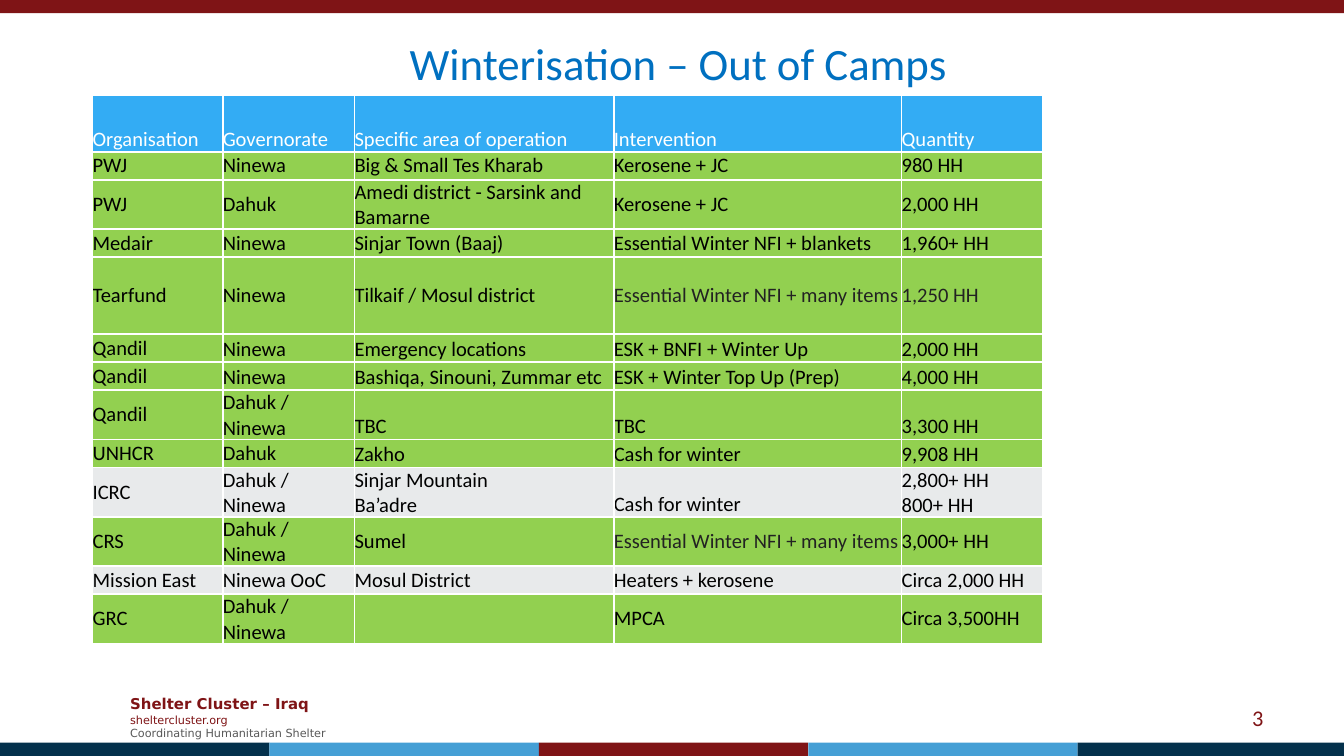
import lxml.etree
import pptx
import pptx.dml.color
import pptx.enum.shapes
import pptx.enum.text
import pptx.oxml.ns
import pptx.util

Cm = pptx.util.Cm
Pt = pptx.util.Pt
RGBColor = pptx.dml.color.RGBColor
Align = pptx.enum.text.PP_ALIGN
Anchor = pptx.enum.text.MSO_ANCHOR
qn = pptx.oxml.ns.qn

MAROON = RGBColor(0x7F, 0x14, 0x16)
NAVY = RGBColor(0x04, 0x31, 0x4C)
SKY = RGBColor(0x45, 0x9F, 0xD5)
TITLE_BLUE = RGBColor(0x00, 0x70, 0xC0)
HEADER_BLUE = RGBColor(0x33, 0xAC, 0xF4)
GREEN = RGBColor(0x92, 0xD0, 0x50)
PALE = RGBColor(0xE8, 0xEA, 0xEB)
WHITE = RGBColor(0xFF, 0xFF, 0xFF)
BLACK = RGBColor(0, 0, 0)
CHARCOAL = RGBColor(0x22, 0x22, 0x22)
GREY = RGBColor(0x59, 0x59, 0x59)

COLUMN_WIDTHS = (2.46, 2.49, 4.9, 5.44, 2.67)
HEADER_HEIGHT, ROW_HEIGHT, TALL_HEIGHT = 1.07, 0.53, 1.45

# Row fill, anchor of each cell (m = middle, b = bottom), cell texts
ROWS = (
    (HEADER_BLUE, "bbbbb", ("Organisation", "Governorate", "Specific area of operation",
                            "Intervention", "Quantity")),
    (GREEN, "mmmmm", ("PWJ", "Ninewa", "Big & Small Tes Kharab", "Kerosene + JC", "980 HH")),
    (GREEN, "mmmmm", ("PWJ", "Dahuk", "Amedi district - Sarsink and Bamarne",
                      "Kerosene + JC", "2,000 HH")),
    (GREEN, "mmmmm", ("Medair", "Ninewa", "Sinjar Town (Baaj)",
                      "Essential Winter NFI + blankets", "1,960+ HH")),
    (GREEN, "mmmmm", ("Tearfund", "Ninewa", "Tilkaif / Mosul district",
                      "Essential Winter NFI + many items", "1,250 HH")),
    (GREEN, "mbbbb", ("Qandil", "Ninewa", "Emergency locations",
                      "ESK + BNFI + Winter Up", "2,000 HH")),
    (GREEN, "mbbbb", ("Qandil", "Ninewa", "Bashiqa, Sinouni, Zummar etc",
                      "ESK + Winter Top Up (Prep)", "4,000 HH")),
    (GREEN, "mbbbb", ("Qandil", "Dahuk / Ninewa", "TBC", "TBC", "3,300 HH")),
    (GREEN, "mmbbb", ("UNHCR", "Dahuk", "Zakho", "Cash for winter", "9,908 HH")),
    (PALE, "mmbbb", ("ICRC", "Dahuk / Ninewa", "Sinjar Mountain\nBa’adre",
                     "Cash for winter", "2,800+ HH\n800+ HH")),
    (GREEN, "mmmmm", ("CRS", "Dahuk / Ninewa", "Sumel",
                      "Essential Winter NFI + many items", "3,000+ HH")),
    (PALE, "mmmmm", ("Mission East", "Ninewa OoC", "Mosul District",
                     "Heaters + kerosene", "Circa 2,000 HH")),
    (GREEN, "mmmmm", ("GRC", "Dahuk / Ninewa", "", "MPCA", "Circa 3,500HH")),
)
TALL_ROW = 4
CHARCOAL_CELLS = {(4, 3), (4, 4), (10, 3)}


def write_lines(frame, lines, font, align=Align.LEFT):
    """Write one paragraph for each (text, size, colour, bold) line."""
    for index, (text, size, colour, bold) in enumerate(lines):
        para = frame.add_paragraph() if index else frame.paragraphs[0]
        para.alignment = align
        span = para.add_run()
        span.text = text
        span.font.name = font
        span.font.size = Pt(size)
        span.font.bold = bold
        span.font.color.rgb = colour


def add_text(page, left, top, width, height, lines, font, align=Align.LEFT,
             anchor=Anchor.MIDDLE):
    box = page.shapes.add_textbox(Cm(left), Cm(top), Cm(width), Cm(height))
    box.text_frame.word_wrap = True
    box.text_frame.vertical_anchor = anchor
    write_lines(box.text_frame, lines, font, align)


def add_bars(page, left, top, width, height, colours):
    """Fill a strip with equal bars, one for each colour."""
    bar_width = width / len(colours)
    for index, colour in enumerate(colours):
        bar = page.shapes.add_shape(
            pptx.enum.shapes.MSO_SHAPE.RECTANGLE,
            Cm(left + index * bar_width), Cm(top), Cm(bar_width), Cm(height))
        bar.shadow.inherit = False
        bar.fill.solid()
        bar.fill.fore_color.rgb = colour
        bar.line.fill.background()


def add_borders(cell):
    properties = cell._tc.get_or_add_tcPr()
    for side in ("a:lnL", "a:lnR", "a:lnT", "a:lnB"):
        line = lxml.etree.SubElement(properties, qn(side), w=str(Pt(1)))
        fill = lxml.etree.SubElement(line, qn("a:solidFill"))
        lxml.etree.SubElement(fill, qn("a:srgbClr"), val=str(WHITE))


def fill_cell(cell, text, colour, fill, anchor):
    cell.margin_left = cell.margin_right = cell.margin_top = cell.margin_bottom = 0
    cell.vertical_anchor = anchor
    add_borders(cell)
    cell.fill.solid()
    cell.fill.fore_color.rgb = fill
    if text:
        lines = [(line, 11, colour, False) for line in text.split("\n")]
        write_lines(cell.text_frame, lines, "Calibri")


def add_interventions(page, left, top, width, height):
    table = page.shapes.add_table(len(ROWS), len(COLUMN_WIDTHS), Cm(left), Cm(top),
                                  Cm(width), Cm(height)).table
    for column, column_width in zip(table.columns, COLUMN_WIDTHS):
        column.width = Cm(column_width)
    special_heights = {0: HEADER_HEIGHT, TALL_ROW: TALL_HEIGHT}
    for row, (fill, anchors, texts) in enumerate(ROWS):
        table.rows[row].height = Cm(special_heights.get(row, ROW_HEIGHT))
        for column, (text, letter) in enumerate(zip(texts, anchors)):
            if row == 0:
                colour = WHITE
            else:
                colour = CHARCOAL if (row, column) in CHARCOAL_CELLS else BLACK
            anchor = Anchor.BOTTOM if letter == "b" else Anchor.MIDDLE
            fill_cell(table.cell(row, column), text, colour, fill, anchor)


def add_footer(page, left, top, width, height):
    add_text(page, left, top, 4.4, 1.12, [
        ("Shelter Cluster – Iraq", 8, MAROON, True),
        ("sheltercluster.org", 6, MAROON, False),
        ("Coordinating Humanitarian Shelter", 6, GREY, False),
    ], "DejaVu Sans")
    number_width = 5.92
    add_text(page, left + width - number_width, top + 0.18, number_width, 0.76,
             [("3", 12, MAROON, False)], "Calibri", Align.RIGHT)
    add_bars(page, 0, top + height - 0.25, 25.46, 0.25, (NAVY, SKY, MAROON, SKY, NAVY))


def main():
    deck = pptx.Presentation()
    deck.slide_width = Cm(25.4)
    deck.slide_height = Cm(14.29)
    page = deck.slides.add_slide(deck.slide_layouts[6])
    add_bars(page, 0, 0, 25.4, 0.25, (MAROON,))
    add_footer(page, 2.21, 13, 21.92, 1.29)
    add_text(page, 1.5, 0.56, 22.63, 1.27,
             [("Winterisation – Out of Camps", 24, TITLE_BLUE, False)],
             "Calibri", Align.CENTER, Anchor.TOP)
    add_interventions(page, 1.75, 1.8, 17.96, 10.34)
    deck.save("out.pptx")


if __name__ == "__main__":
    main()
